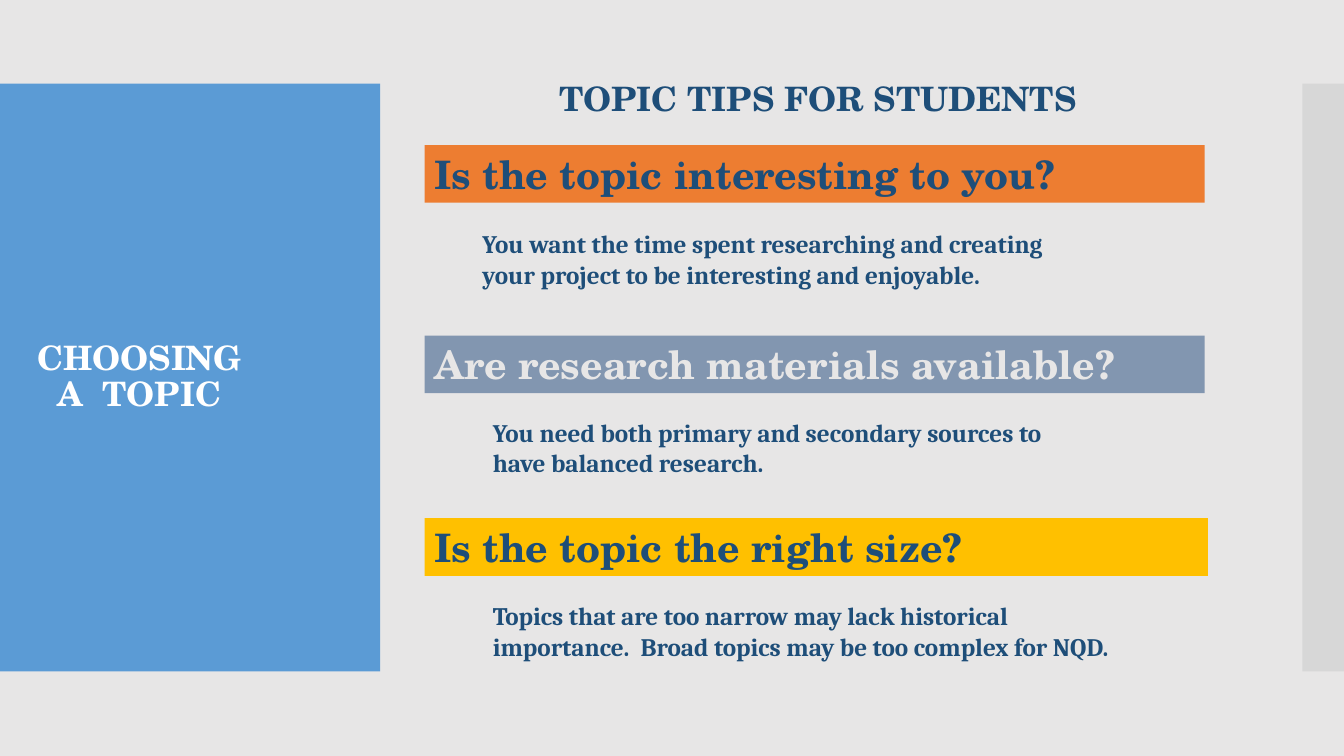
from dataclasses import dataclass

from lxml import etree
from pptx import Presentation
from pptx.dml.color import RGBColor
from pptx.enum.shapes import MSO_SHAPE
from pptx.enum.text import MSO_ANCHOR, MSO_AUTO_SIZE, PP_ALIGN
from pptx.oxml.ns import qn
from pptx.shapes.autoshape import Shape
from pptx.slide import Slide
from pptx.util import Cm, Pt

RECT = MSO_SHAPE.RECTANGLE
LEFT, CENTER = PP_ALIGN.LEFT, PP_ALIGN.CENTER
TOP, MIDDLE = MSO_ANCHOR.TOP, MSO_ANCHOR.MIDDLE
NO_FIT = MSO_AUTO_SIZE.NONE

HEAD, BODY = "TeX Gyre Schola", "Cambria"
COLORS = {
    "page": "E7E6E6",
    "panel": "5B9BD5",
    "strip": "C8C8C8",
    "navy": "1E4E79",
    "white": "FFFFFF",
    "orange": "ED7D31",
    "slate": "8296B0",
    "gold": "FFC000",
}
WIDTH, HEIGHT = 33.87, 19.05
BAND_TOP, BAND_HIGH = 2.11, 14.81
BAR_LEFT, BAR_HIGH, NOTE_HIGH = 10.7, 1.45, 1.8


@dataclass
class Box:
    """Left, top, width and height in centimetres."""
    left: float
    top: float
    width: float
    height: float

    def cm(self) -> list[Cm]:
        return [Cm(self.left), Cm(self.top), Cm(self.width), Cm(self.height)]


@dataclass
class Tip:
    ask: str
    fill: str
    ink: str
    top: float
    width: float
    note: str
    spot: Box


TIPS = [
    Tip("Is the topic interesting to you?", "orange", "navy", 3.66, 19.66,
        "You want the time spent researching and creating your project "
        "to be interesting and enjoyable.",
        Box(11.91, 5.64, 15.57, NOTE_HIGH)),
    Tip("Are research materials available?", "slate", "page", 8.46, 19.66,
        "You need both primary and secondary sources to have balanced research.",
        Box(12.17, 10.39, 15.32, NOTE_HIGH)),
    Tip("Is the topic the right size?", "gold", "navy", 13.06, 19.74,
        "Topics that are too narrow may lack historical importance.  "
        "Broad topics may be too complex for NQD.",
        Box(12.17, 15.01, 16.81, NOTE_HIGH)),
]


def color(name: str) -> RGBColor:
    return RGBColor.from_string(COLORS[name])


def add_rect(slide: Slide, box: Box, fill: str) -> Shape:
    shape = slide.shapes.add_shape(RECT, *box.cm())
    shape.shadow.inherit = False
    shape.fill.solid()
    shape.fill.fore_color.rgb = color(fill)
    shape.line.fill.background()
    return shape


def fade(shape: Shape, percent: int) -> None:
    """Set the opacity of a solid fill."""
    tint = shape._element.spPr.find(f"{qn('a:solidFill')}/{qn('a:srgbClr')}")
    etree.SubElement(tint, qn("a:alpha"), val=str(percent * 1000))


def write(shape: Shape, text: str, face: str, size: int, ink: str,
          align: PP_ALIGN = LEFT, anchor: MSO_ANCHOR = TOP) -> None:
    frame = shape.text_frame
    frame.text = text
    frame.word_wrap = True
    frame.auto_size = NO_FIT
    frame.vertical_anchor = anchor
    para = frame.paragraphs[0]
    para.alignment = align
    font = para.font
    font.name, font.size, font.bold = face, Pt(size), True
    font.color.rgb = color(ink)


def add_text(slide: Slide, box: Box, text: str, face: str, size: int) -> None:
    write(slide.shapes.add_textbox(*box.cm()), text, face, size, "navy")


def set_title(slide: Slide) -> None:
    title = slide.shapes.title
    box = Box(0.71, 3.12, 8.18, 12.78)
    title.left, title.top, title.width, title.height = box.cm()
    write(title, "CHOOSING\vA  TOPIC", HEAD, 24, "white", CENTER, MIDDLE)
    frame = title.text_frame
    frame.margin_left, frame.margin_right = Cm(0.13), Cm(2.7)
    frame.paragraphs[0].line_spacing = 0.9
    slide.shapes._spTree.append(title._element)  # in front of the panel


def add_tip(slide: Slide, tip: Tip) -> None:
    bar = add_rect(slide, Box(BAR_LEFT, tip.top, tip.width, BAR_HIGH), tip.fill)
    write(bar, tip.ask, HEAD, 28, tip.ink)
    add_text(slide, tip.spot, tip.note, BODY, 18)


def main() -> None:
    deck = Presentation()
    deck.slide_width, deck.slide_height = Cm(WIDTH), Cm(HEIGHT)
    slide = deck.slides.add_slide(deck.slide_layouts.get_by_name("Title Only"))
    slide.background.fill.solid()
    slide.background.fill.fore_color.rgb = color("page")

    add_rect(slide, Box(0, BAND_TOP, 9.58, BAND_HIGH), "panel")
    strip = add_rect(slide, Box(32.82, BAND_TOP, 1.05, BAND_HIGH), "strip")
    fade(strip, 49)
    set_title(slide)
    add_text(slide, Box(13.84, 1.83, 15.11, 1.27),
             "TOPIC TIPS FOR STUDENTS", HEAD, 24)
    for tip in TIPS:
        add_tip(slide, tip)
    deck.save("out.pptx")


if __name__ == "__main__":
    main()
